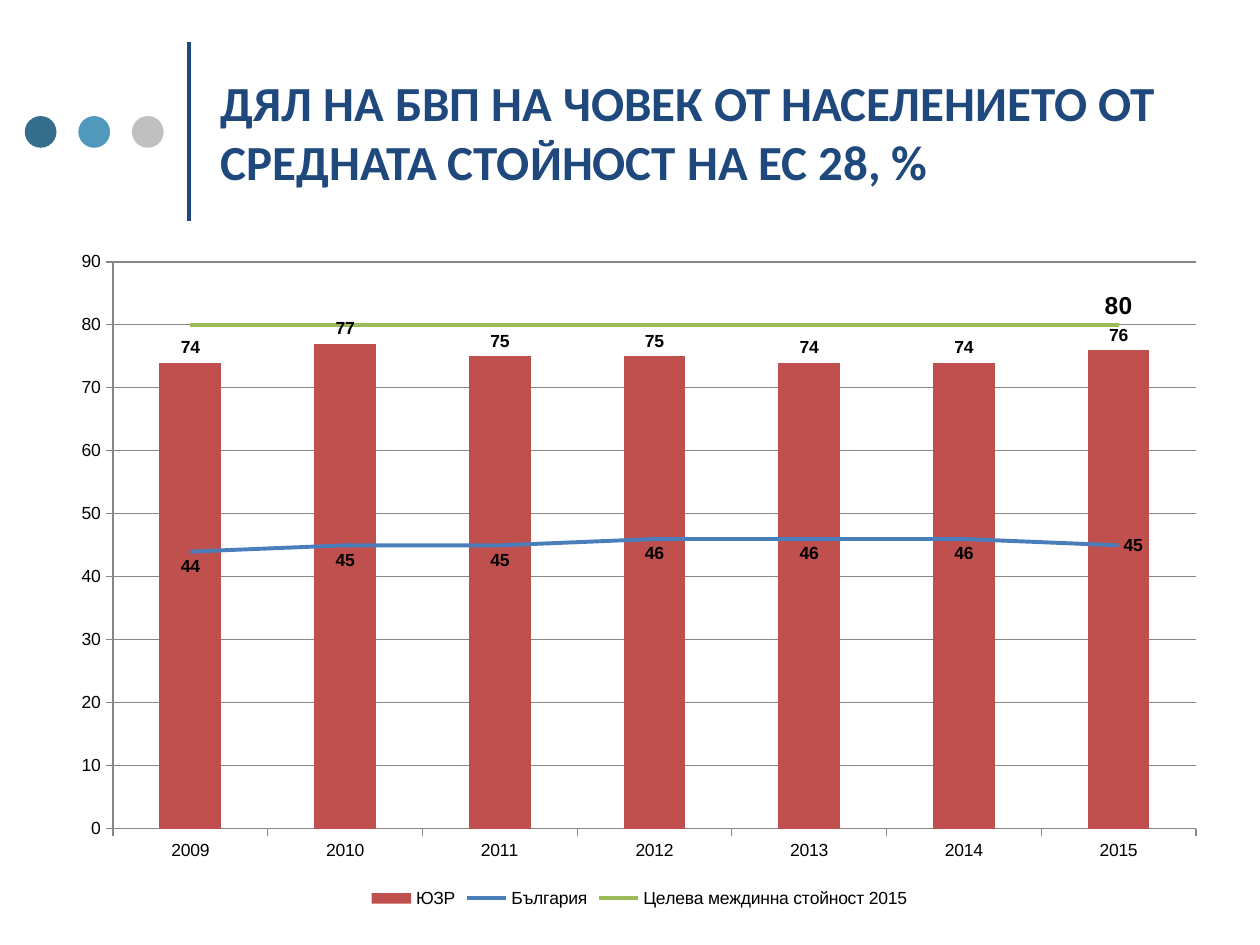
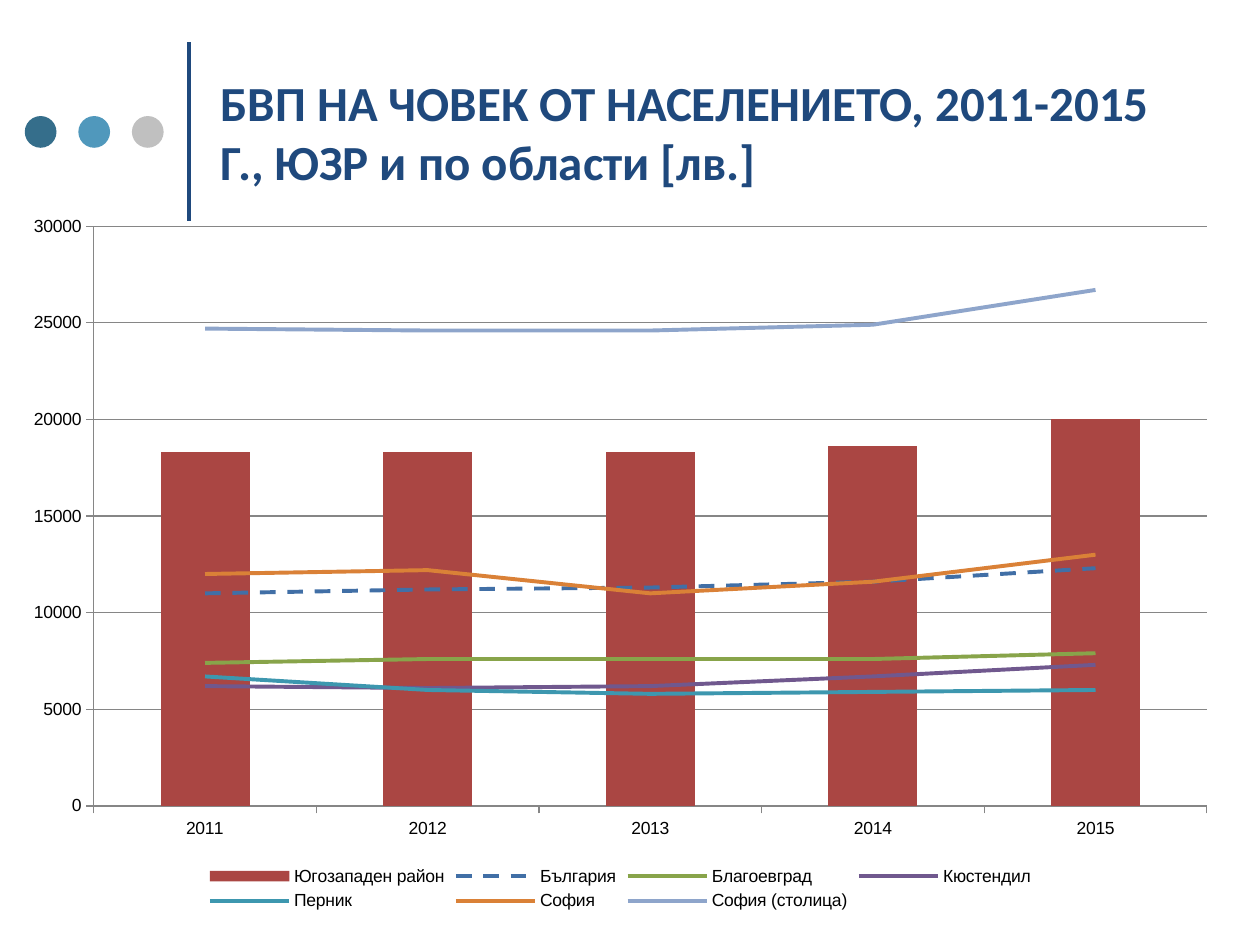
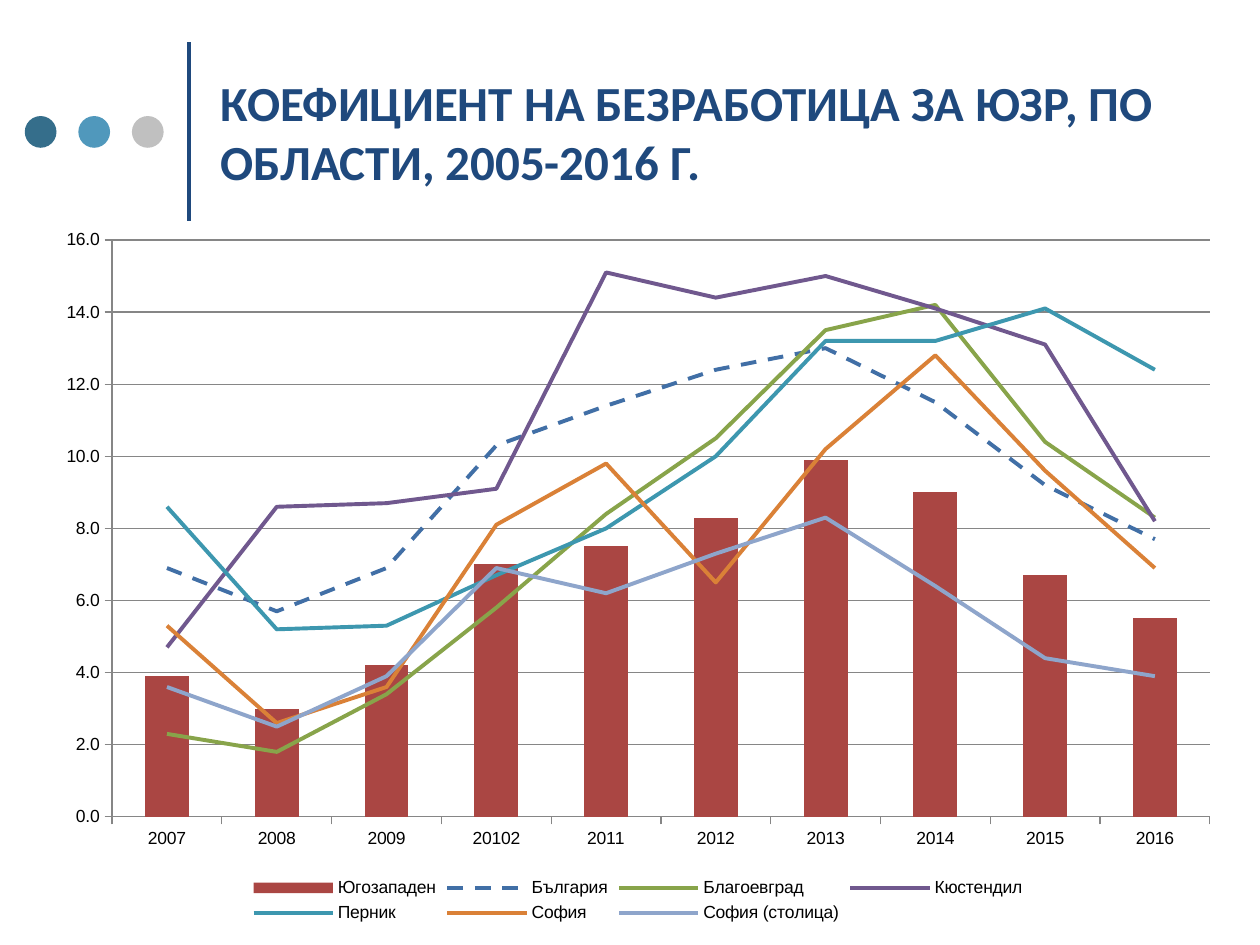
from dataclasses import dataclass

from lxml import etree
from pptx import Presentation
from pptx.chart.data import CategoryChartData
from pptx.dml.color import RGBColor
from pptx.enum.chart import (XL_CHART_TYPE, XL_LABEL_POSITION, XL_LEGEND_POSITION,
                             XL_MARKER_STYLE, XL_TICK_MARK)
from pptx.enum.dml import MSO_LINE
from pptx.enum.shapes import MSO_CONNECTOR, MSO_SHAPE
from pptx.enum.text import MSO_ANCHOR
from pptx.oxml.ns import qn
from pptx.util import Cm, Pt

COLUMNS = XL_CHART_TYPE.COLUMN_CLUSTERED
ABOVE, BELOW = XL_LABEL_POSITION.ABOVE, XL_LABEL_POSITION.BELOW
RIGHT, OUTSIDE = XL_LABEL_POSITION.RIGHT, XL_LABEL_POSITION.OUTSIDE_END
LEGEND_BOTTOM = XL_LEGEND_POSITION.BOTTOM
NO_MARKER = XL_MARKER_STYLE.NONE
TICK_OUT, TICK_NONE = XL_TICK_MARK.OUTSIDE, XL_TICK_MARK.NONE
DASH = MSO_LINE.DASH
MIDDLE = MSO_ANCHOR.MIDDLE
STRAIGHT, ELLIPSE = MSO_CONNECTOR.STRAIGHT, MSO_SHAPE.OVAL

NAVY = RGBColor(0x1F, 0x49, 0x7D)
BLACK = RGBColor(0, 0, 0)
GRID = RGBColor(0x86, 0x86, 0x86)
DOTS = (RGBColor(0x35, 0x6E, 0x8B), RGBColor(0x50, 0x98, 0xBC), RGBColor(0xC0, 0xC0, 0xC0))

# Series colours of the target chart
RED = RGBColor(0xC0, 0x50, 0x4D)
BLUE = RGBColor(0x4A, 0x7E, 0xBB)
LIME = RGBColor(0x9B, 0xBB, 0x59)

# Series colours of the charts by district
BRICK = RGBColor(0xAA, 0x46, 0x43)
STEEL = RGBColor(0x41, 0x6F, 0xA6)
GREEN = RGBColor(0x88, 0xA4, 0x4A)
PURPLE = RGBColor(0x70, 0x58, 0x8E)
TEAL = RGBColor(0x3D, 0x97, 0xAF)
ORANGE = RGBColor(0xDA, 0x81, 0x37)
PALE_BLUE = RGBColor(0x8E, 0xA5, 0xCB)


@dataclass
class Box:
    """Left, top, width and height in centimetres."""
    left: float
    top: float
    width: float
    height: float

    def lengths(self) -> tuple:
        return Cm(self.left), Cm(self.top), Cm(self.width), Cm(self.height)


@dataclass
class Series:
    name: str
    color: RGBColor
    values: tuple
    dashed: bool = False


@dataclass
class ChartSlide:
    title: str
    frame: Box
    plot: Box
    categories: tuple
    series: list          # the first is drawn as columns, the others as lines
    maximum: float
    step: float
    number_format: str = "General"


def district_series(region: str, rows: tuple) -> list:
    names = (region, "България", "Благоевград", "Кюстендил", "Перник", "София",
             "София (столица)")
    colors = (BRICK, STEEL, GREEN, PURPLE, TEAL, ORANGE, PALE_BLUE)
    return [Series(name, color, values, name == "България")
            for name, color, values in zip(names, colors, rows)]


SHARE = ChartSlide(
    "ДЯЛ НА БВП НА ЧОВЕК ОТ НАСЕЛЕНИЕТО ОТ СРЕДНАТА СТОЙНОСТ НА ЕС 28, %",
    Box(1.19, 4.8, 23.39, 13.61), Box(2.28, 5.28, 21.83, 11.43),
    tuple(range(2009, 2016)),
    [Series("ЮЗР", RED, (74, 77, 75, 75, 74, 74, 76)),
     Series("България", BLUE, (44, 45, 45, 46, 46, 46, 45)),
     Series("Целева междинна стойност 2015", LIME, (80,) * 7)],
    90, 10)

INCOME = ChartSlide(
    "БВП НА ЧОВЕК ОТ НАСЕЛЕНИЕТО, 2011-2015 Г., ЮЗР и по области [лв.]",
    Box(0.2, 4.06, 24.61, 14.4), Box(1.89, 4.56, 22.44, 11.69),
    tuple(range(2011, 2016)),
    district_series("Югозападен район", (
        (18300, 18300, 18300, 18600, 20000),
        (11000, 11200, 11300, 11600, 12300),
        (7400, 7600, 7600, 7600, 7900),
        (6200, 6100, 6200, 6700, 7300),
        (6700, 6000, 5800, 5900, 6000),
        (12000, 12200, 11000, 11600, 13000),
        (24700, 24600, 24600, 24900, 26700))),
    30000, 5000)

UNEMPLOYMENT = ChartSlide(
    "КОЕФИЦИЕНТ НА БЕЗРАБОТИЦА ЗА ЮЗР, ПО ОБЛАСТИ, 2005-2016 Г.",
    Box(0.86, 4.37, 24, 14.33), Box(2.26, 4.84, 22.13, 11.63),
    (2007, 2008, 2009, 20102, *range(2011, 2017)),
    district_series("Югозападен", (
        (3.9, 3, 4.2, 7, 7.5, 8.3, 9.9, 9, 6.7, 5.5),
        (6.9, 5.7, 6.9, 10.3, 11.4, 12.4, 13, 11.5, 9.2, 7.7),
        (2.3, 1.8, 3.4, 5.8, 8.4, 10.5, 13.5, 14.2, 10.4, 8.3),
        (4.7, 8.6, 8.7, 9.1, 15.1, 14.4, 15, 14.1, 13.1, 8.2),
        (8.6, 5.2, 5.3, 6.7, 8, 10, 13.2, 13.2, 14.1, 12.4),
        (5.3, 2.6, 3.6, 8.1, 9.8, 6.5, 10.2, 12.8, 9.6, 6.9),
        (3.6, 2.5, 3.9, 6.9, 6.2, 7.3, 8.3, 6.4, 4.4, 3.9))),
    16, 2, "0.0")


def set_font(font, *, size: float, color: RGBColor = BLACK, name: str = "Arial",
             bold: bool = False) -> None:
    font.size, font.name, font.bold = Pt(size), name, bold
    font.color.rgb = color


def add_text(s, text: str, box: Box, *, inset: float = 0.21, **style) -> None:
    tf = s.shapes.add_textbox(*box.lengths()).text_frame
    tf.word_wrap = True
    tf.vertical_anchor = MIDDLE
    tf.margin_left = tf.margin_right = tf.margin_top = tf.margin_bottom = Cm(inset)
    r = tf.paragraphs[0].add_run()
    r.text = text
    set_font(r.font, **style)


def add_header(s, title: str) -> None:
    """Vertical rule, three dots and the title."""
    rule = s.shapes.add_connector(STRAIGHT, Cm(3.81), Cm(4.45), Cm(3.81), Cm(0.84))
    rule.line.color.rgb = NAVY
    rule.line.width = Pt(2)
    etree.SubElement(rule._element.spPr, qn("a:effectLst"))
    for i, color in enumerate(DOTS):
        dot = s.shapes.add_shape(ELLIPSE, *Box(0.5 + 1.08 * i, 2.34, 0.64, 0.64).lengths())
        dot.shadow.inherit = False
        dot.fill.solid()
        dot.fill.fore_color.rgb = color
        dot.line.fill.background()
    add_text(s, title, Box(4.24, 0.53, 19.48, 4.24),
             size=28, color=NAVY, name="Calibri", bold=True)


def lines_from_columns(chart) -> None:
    """Move every series but the first to a line chart on the same axes."""
    bars = chart.plots[0]._element
    lines = etree.Element(qn("c:lineChart"))
    # The parser of an existing element gives the new one its python-pptx class
    lines = bars.makeelement(qn("c:lineChart"))
    etree.SubElement(lines, qn("c:grouping")).set("val", "standard")
    etree.SubElement(lines, qn("c:varyColors")).set("val", "0")
    for ser in bars.findall(qn("c:ser"))[1:]:
        for flag in ser.findall(qn("c:invertIfNegative")):
            ser.remove(flag)
        lines.append(ser)
    etree.SubElement(lines, qn("c:marker")).set("val", "1")
    for axis in bars.findall(qn("c:axId")):
        etree.SubElement(lines, qn("c:axId")).set("val", axis.get("val"))
    bars.addnext(lines)


def place_plot(chart, frame: Box, plot: Box) -> None:
    """Fix the inner plot area as fractions of the chart frame."""
    area = chart.plots[0]._element.getparent()
    for old in area.findall(qn("c:layout")):
        area.remove(old)
    layout = area.makeelement(qn("c:layout"))
    area.insert(0, layout)
    manual = etree.SubElement(layout, qn("c:manualLayout"))
    settings = {"layoutTarget": "inner", "xMode": "edge", "yMode": "edge",
                "x": (plot.left - frame.left) / frame.width,
                "y": (plot.top - frame.top) / frame.height,
                "w": plot.width / frame.width, "h": plot.height / frame.height}
    for tag, value in settings.items():
        etree.SubElement(manual, qn("c:" + tag)).set("val", str(value))


def format_axes(chart, spec_slide: ChartSlide) -> None:
    values = chart.value_axis
    values.minimum_scale, values.maximum_scale = 0, spec_slide.maximum
    values.major_unit = spec_slide.step
    values.has_major_gridlines = True
    values.tick_labels.number_format = spec_slide.number_format
    values.tick_labels.number_format_is_linked = False
    for axis in (chart.category_axis, values):
        axis.major_tick_mark, axis.minor_tick_mark = TICK_OUT, TICK_NONE
    for line in (values.format.line, chart.category_axis.format.line,
                 values.major_gridlines.format.line):
        line.color.rgb = GRID
        line.width = Pt(0.75)


def add_combined_chart(s, content: ChartSlide):
    data = CategoryChartData()
    data.categories = [str(c) for c in content.categories]
    for row in content.series:
        data.add_series(row.name, row.values)
    chart = s.shapes.add_chart(COLUMNS, *content.frame.lengths(), data).chart
    chart.has_title = False
    set_font(chart.font, size=10)
    chart.has_legend = True
    chart.legend.position = LEGEND_BOTTOM
    chart.legend.include_in_layout = False
    format_axes(chart, content)
    lines_from_columns(chart)
    place_plot(chart, content.frame, content.plot)

    columns, lines = chart.plots
    columns.gap_width = 150
    columns.vary_by_categories = False
    fill = columns.series[0].format.fill
    fill.solid()
    fill.fore_color.rgb = content.series[0].color
    for ser, row in zip(lines.series, content.series[1:]):
        ser.smooth = False
        ser.marker.style = NO_MARKER
        ser.format.line.color.rgb = row.color
        ser.format.line.width = Pt(2.25)
        if row.dashed:
            ser.format.line.dash_style = DASH
    return chart


def label_series(ser, position) -> None:
    labels = ser.data_labels
    labels.show_value = True
    labels.position = position
    set_font(labels.font, size=10, bold=True)


def label_last_point(ser, position, size: float) -> None:
    label = ser.points[len(ser.values) - 1].data_label
    set_font(label.font, size=size, bold=True)
    label.position = position


def label_share_chart(chart) -> None:
    columns, lines = chart.plots
    country, target = lines.series
    label_series(columns.series[0], OUTSIDE)
    label_series(country, BELOW)
    label_last_point(country, RIGHT, 10)
    target.data_labels.show_value = False
    label_last_point(target, ABOVE, 14)


def main() -> None:
    prs = Presentation()
    prs.slide_width, prs.slide_height = Cm(25.4), Cm(19.05)
    for content in (SHARE, INCOME, UNEMPLOYMENT):
        s = prs.slides.add_slide(prs.slide_layouts[6])
        add_header(s, content.title)
        chart = add_combined_chart(s, content)
        if content is SHARE:
            label_share_chart(chart)
    prs.save("out.pptx")


if __name__ == "__main__":
    main()
